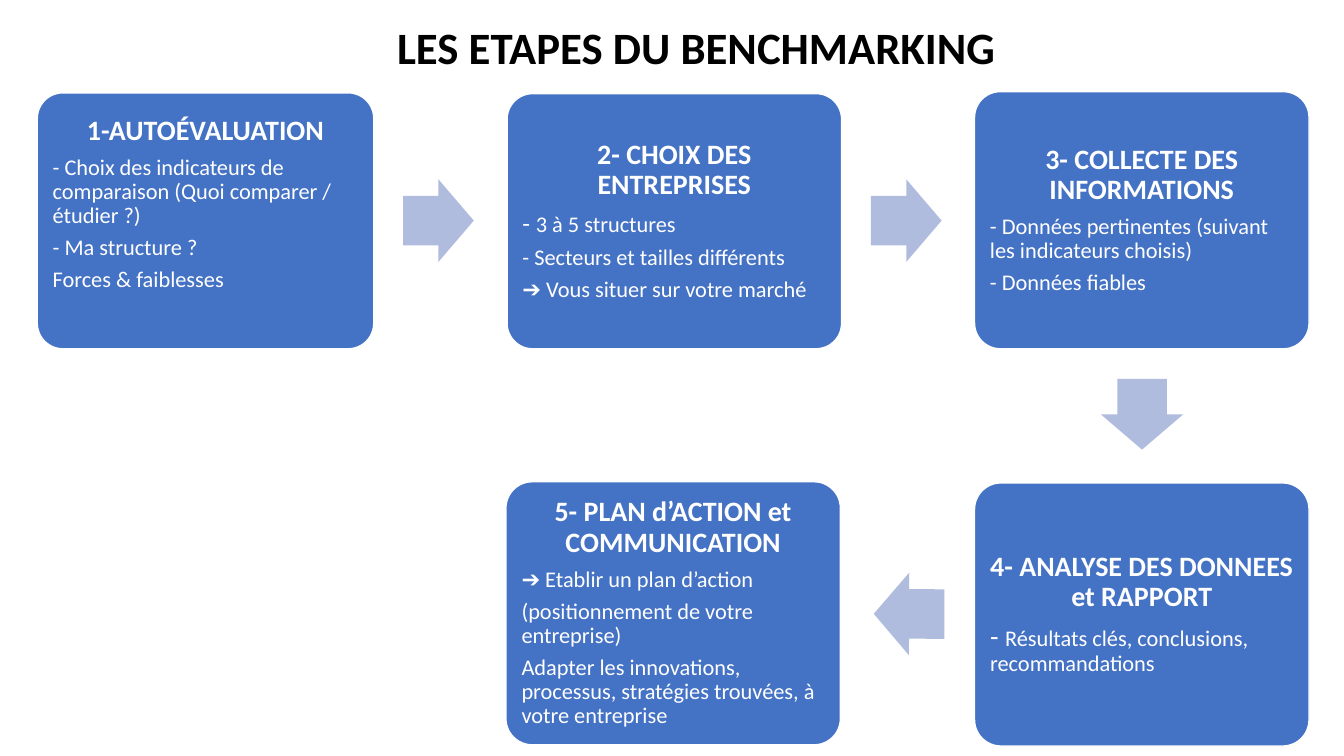
from pptx import Presentation
from pptx.dml.color import RGBColor
from pptx.enum.shapes import MSO_SHAPE
from pptx.enum.text import MSO_ANCHOR, PP_ALIGN
from pptx.util import Cm, Pt

BLUE = RGBColor(0x44, 0x72, 0xC4)
PALE = RGBColor(0xB0, 0xBC, 0xDE)
WHITE = RGBColor(0xFF, 0xFF, 0xFF)
BLACK = RGBColor(0, 0, 0)

PAD = 0.2
# Left, top, width, height, bottom inset, size of first dash, heading, lines
STEPS = [
    (0.94, 2.34, 8.48, 6.45, 1.02, 16, "1-AUTOÉVALUATION",
     ["- Choix des indicateurs de comparaison (Quoi comparer / étudier ?)",
      "- Ma structure ?", "Forces & faiblesses"]),
    (12.78, 2.36, 8.43, 6.43, PAD, 18, "2- CHOIX DES ENTREPRISES",
     ["- 3 à 5 structures", "- Secteurs et tailles différents",
      "➔ Vous situer sur votre marché"]),
    (24.56, 2.31, 8.43, 6.48, PAD, 16, "3- COLLECTE DES INFORMATIONS",
     ["- Données pertinentes (suivant les indicateurs choisis)",
      "- Données fiables"]),
    (24.56, 12.17, 8.43, 6.63, PAD, 20, "4- ANALYSE DES DONNEES et RAPPORT",
     ["- Résultats clés, conclusions, recommandations"]),
    (12.75, 12.14, 8.43, 6.63, PAD, 16, "5- PLAN d’ACTION et COMMUNICATION",
     ["➔ Etablir un plan d’action", "(positionnement de votre entreprise)",
      "Adapter les innovations, processus, stratégies trouvées, "
      "à votre entreprise"]),
]
# Left, top, turn
ARROWS = [(10.16, 4.52, 0), (21.95, 4.52, 0),
          (27.89, 9.4, 90), (22.02, 14.43, 180.2)]


def style(item, form):
    for name, value in form.items():
        setattr(item, name, value)


def add_run(para, text, size, color, bold=False):
    run = para.add_run()
    run.text = text
    style(run.font, {"name": "Calibri", "size": Pt(size), "bold": bold})
    run.font.color.rgb = color


def add_form(slide, kind, rect, color, adjust):
    form = slide.shapes.add_shape(kind, *map(Cm, rect))
    form.shadow.inherit = False
    form.fill.solid()
    form.fill.fore_color.rgb = color
    for i, value in enumerate(adjust):
        form.adjustments[i] = value
    return form


def add_step(slide, left, top, width, height, base, dash, head, lines):
    box = add_form(slide, MSO_SHAPE.ROUNDED_RECTANGLE,
                   (left, top, width, height), BLUE, [0.1])
    box.line.color.rgb = WHITE
    box.line.width = Pt(1)
    frame = box.text_frame
    style(frame, {"word_wrap": True, "vertical_anchor": MSO_ANCHOR.MIDDLE,
                  "margin_left": Cm(PAD), "margin_right": Cm(PAD),
                  "margin_top": Cm(PAD), "margin_bottom": Cm(base)})
    # Heading
    para = frame.paragraphs[0]
    style(para, {"alignment": PP_ALIGN.CENTER, "line_spacing": 0.9,
                 "space_after": Pt(7)})
    add_run(para, head, 20, WHITE, True)
    # Detail lines, the first dash may be larger
    for i, line in enumerate(lines):
        para = frame.add_paragraph()
        style(para, {"alignment": PP_ALIGN.LEFT, "line_spacing": 0.9,
                     "space_after": Pt(5.6)})
        if i == 0 and dash != 16:
            add_run(para, line[:2], dash, WHITE)
            line = line[2:]
        add_run(para, line, 16, WHITE)


def add_arrow(slide, left, top, turn):
    arrow = add_form(slide, MSO_SHAPE.RIGHT_ARROW,
                     (left, top, 1.78, 2.08), PALE, [0.6, 0.5])
    arrow.line.fill.background()
    arrow.rotation = turn


def add_title(slide, text):
    box = slide.shapes.add_textbox(Cm(8.76), Cm(0.36), Cm(17.58), Cm(1.63))
    box.text_frame.word_wrap = True
    para = box.text_frame.paragraphs[0]
    para.alignment = PP_ALIGN.CENTER
    add_run(para, text, 32, BLACK, True)


def main():
    deck = Presentation()
    style(deck, {"slide_width": Cm(33.87), "slide_height": Cm(19.05)})
    slide = deck.slides.add_slide(deck.slide_layouts[6])
    # Steps and the arrows between them
    for step in STEPS:
        add_step(slide, *step)
    for arrow in ARROWS:
        add_arrow(slide, *arrow)
    add_title(slide, "LES ETAPES DU BENCHMARKING")
    deck.save("out.pptx")


if __name__ == "__main__":
    main()
